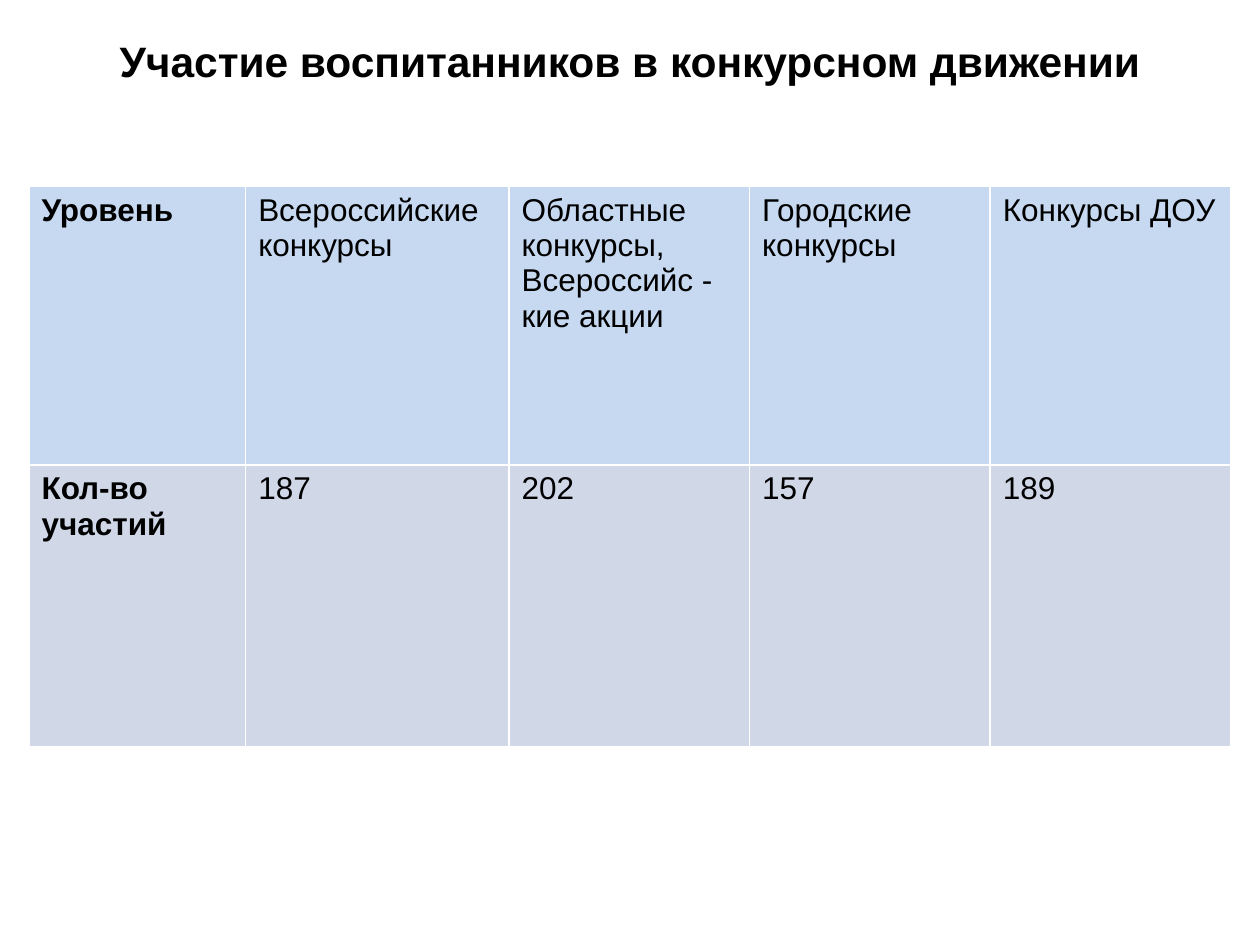
from pptx import Presentation
from pptx.dml.color import RGBColor
from pptx.enum import text
from pptx.util import Inches, Pt

TITLE = "Участие воспитанников в конкурсном движении"
ROWS = [
    ["Уровень", "Всероссийские конкурсы",
     "Областные\nконкурсы,\nВсероссийс -\nкие акции",
     "Городские конкурсы", "Конкурсы ДОУ"],
    ["Кол-во участий", "187", "202", "157", "189"],
]
ROW_FILLS = ["C6D9F1", "D0D8E8"]
ROW_HEIGHTS = [2.21, 2.24]
COLUMN_WIDTHS = [1.72, 2.09, 1.91, 1.91, 1.91]


def color(hex_string):
    return RGBColor.from_string(hex_string)


def write(frame, content, size=18, bold=False, align=text.PP_ALIGN.LEFT):
    """Fill a text frame, one paragraph for each line of content."""
    frame.word_wrap = True
    frame.text = content
    for paragraph in frame.paragraphs:
        paragraph.alignment = align
        for run in paragraph.runs:
            run.font.name = "Arial"
            run.font.size = Pt(size)
            run.font.bold = bold
            run.font.color.rgb = color("000000")


prs = Presentation()
prs.slide_width, prs.slide_height = Inches(10), Inches(7.5)
slide = prs.slides.add_slide(prs.slide_layouts[6])

title = slide.shapes.add_textbox(Inches(0.5), Inches(0.28), Inches(9), Inches(0.56))
title.text_frame.margin_top = 0
write(title.text_frame, TITLE, size=24.3, bold=True, align=text.PP_ALIGN.CENTER)

# The default table style draws the white grid and the thicker line under the first row.
table = slide.shapes.add_table(
    len(ROWS), len(COLUMN_WIDTHS), Inches(0.23), Inches(1.48),
    Inches(sum(COLUMN_WIDTHS)), Inches(sum(ROW_HEIGHTS))).table
table.horz_banding = False
for column, width in zip(table.columns, COLUMN_WIDTHS):
    column.width = Inches(width)
for row, height, fill, entries in zip(table.rows, ROW_HEIGHTS, ROW_FILLS, ROWS):
    row.height = Inches(height)
    for index, (cell, entry) in enumerate(zip(row.cells, entries)):
        cell.fill.solid()
        cell.fill.fore_color.rgb = color(fill)
        write(cell.text_frame, entry, bold=index == 0)

prs.save("out.pptx")
